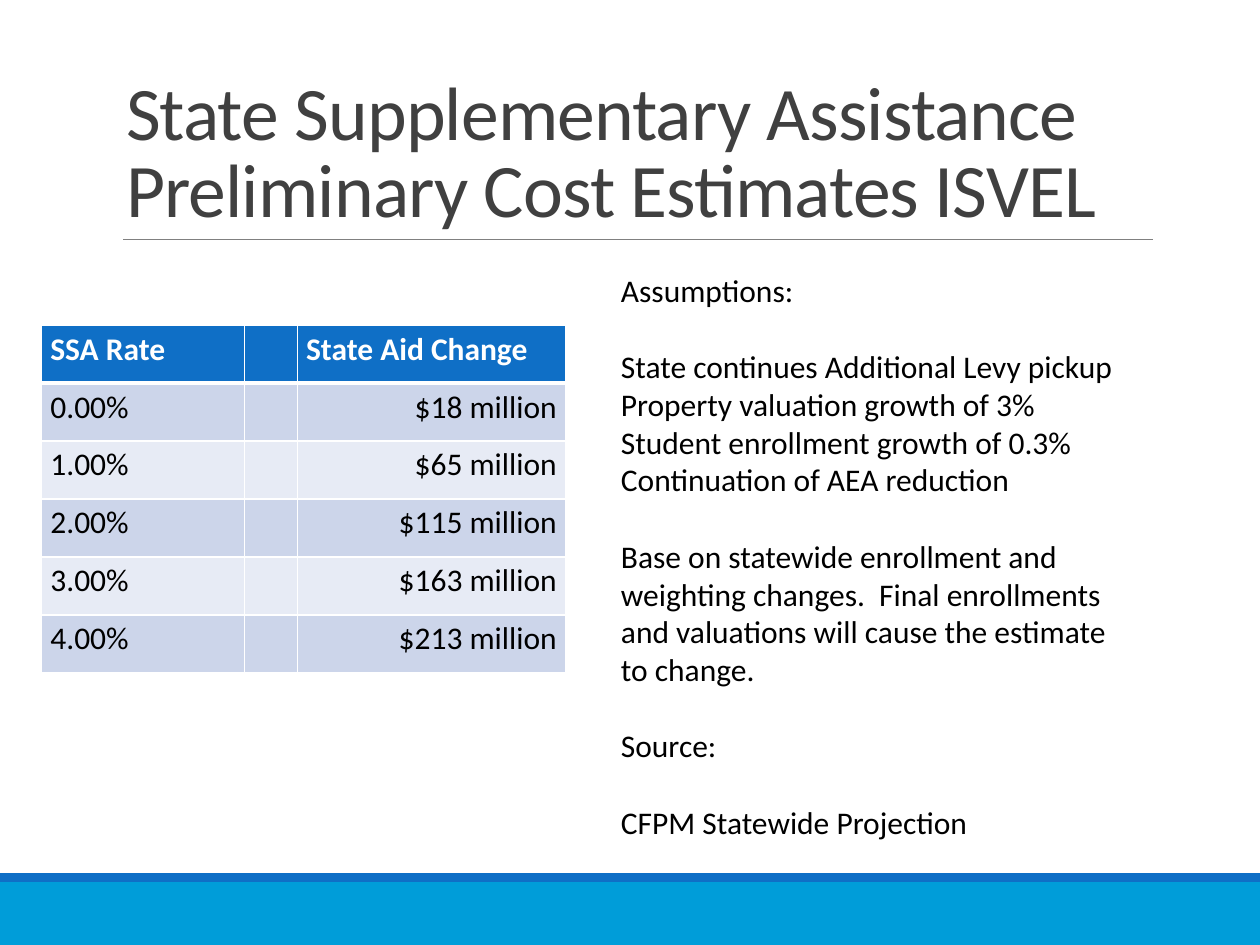
import pptx
import pptx.util
import pptx.dml.color
import pptx.enum.shapes
import pptx.enum.text
import pptx.oxml
import pptx.oxml.ns
from pptx.util import Inches

FONT = "Calibri"
TITLE = "State Supplementary Assistance Preliminary Cost Estimates ISVEL"
BANDS = [(7, 0.5, "009DD9"), (6.93, 0.07, "0F6FC6")]
TABLE_ROWS = [
    ("SSA Rate", "", "State Aid Change"),
    ("0.00%", "", "$18 million"),
    ("1.00%", "", "$65 million"),
    ("2.00%", "", "$115 million"),
    ("3.00%", "", "$163 million"),
    ("4.00%", "", "$213 million"),
]
COLUMN_WIDTHS = [1.61, 0.42, 2.13]
ROW_HEIGHT = 0.46
HEADER_FILL = "0F6FC6"
ROW_FILLS = ["CCD5EA", "E7EBF5"]
NOTE_GROUPS = [
    ["Assumptions:"],
    [
        "State continues Additional Levy pickup",
        "Property valuation growth of 3%",
        "Student enrollment growth of 0.3%",
        "Continuation of AEA reduction",
    ],
    ["Base on statewide enrollment and weighting changes.  Final enrollments "
     "and valuations will cause the estimate to change."],
    ["Source:"],
    ["CFPM Statewide Projection"],
]
GROUP_GAP = 22


def color(value):
    return pptx.dml.color.RGBColor.from_string(value)


def add_run(paragraph, text, size, text_color, bold=False):
    run = paragraph.add_run()
    run.text = text
    run.font.name = FONT
    run.font.size = pptx.util.Pt(size)
    run.font.bold = bold
    run.font.color.rgb = color(text_color)
    return run


def clear_shadow(connector):
    properties = connector._element.spPr
    properties.append(pptx.oxml.parse_xml(
        f"<a:effectLst {pptx.oxml.ns.nsdecls('a')}/>"))


def set_borders(cell, bottom_width):
    properties = cell._tc.get_or_add_tcPr()
    widths = {"lnL": 1, "lnR": 1, "lnT": 1, "lnB": bottom_width}
    for position, (side, width) in enumerate(widths.items()):
        properties.insert(position, pptx.oxml.parse_xml(
            f"<a:{side} {pptx.oxml.ns.nsdecls('a')} w=\"{pptx.util.Pt(width)}\">"
            f"<a:solidFill><a:srgbClr val=\"FFFFFF\"/></a:solidFill></a:{side}>"))


def add_bands(slide):
    for top, height, fill in BANDS:
        band = slide.shapes.add_shape(
            pptx.enum.shapes.MSO_SHAPE.RECTANGLE,
            0, Inches(top), Inches(10), Inches(height))
        band.shadow.inherit = False
        band.fill.solid()
        band.fill.fore_color.rgb = color(fill)
        band.line.fill.background()


def add_title(slide):
    title = slide.shapes.title
    title.left, title.top = Inches(0.9), Inches(0.31)
    title.width, title.height = Inches(8.25), Inches(1.59)
    frame = title.text_frame
    frame.word_wrap = True
    frame.auto_size = pptx.enum.text.MSO_AUTO_SIZE.NONE
    frame.vertical_anchor = pptx.enum.text.MSO_ANCHOR.BOTTOM
    paragraph = frame.paragraphs[0]
    paragraph.alignment = pptx.enum.text.PP_ALIGN.LEFT
    paragraph.line_spacing = 0.85
    run = add_run(paragraph, TITLE, 43.2, "404040")
    run._r.get_or_add_rPr().set("spc", "-50")

    rule = slide.shapes.add_connector(
        pptx.enum.shapes.MSO_CONNECTOR.STRAIGHT,
        Inches(0.98), Inches(1.9), Inches(9.15), Inches(1.9))
    rule.line.color.rgb = color("808080")
    rule.line.width = pptx.util.Pt(0.5)
    clear_shadow(rule)


def add_rate_table(slide):
    table = slide.shapes.add_table(
        len(TABLE_ROWS), len(COLUMN_WIDTHS), Inches(0.33), Inches(2.58),
        Inches(sum(COLUMN_WIDTHS)), Inches(ROW_HEIGHT * len(TABLE_ROWS))).table
    for column, width in zip(table.columns, COLUMN_WIDTHS):
        column.width = Inches(width)
    for row_index, values in enumerate(TABLE_ROWS):
        table.rows[row_index].height = Inches(ROW_HEIGHT)
        header = row_index == 0
        for column_index, text in enumerate(values):
            cell = table.cell(row_index, column_index)
            cell.margin_left = cell.margin_right = Inches(0.07)
            cell.margin_top = cell.margin_bottom = Inches(0.04)
            cell.fill.solid()
            cell.fill.fore_color.rgb = color(
                HEADER_FILL if header else ROW_FILLS[(row_index - 1) % 2])
            set_borders(cell, 3 if header else 1)
            if text:
                paragraph = cell.text_frame.paragraphs[0]
                if column_index == 2 and not header:
                    paragraph.alignment = pptx.enum.text.PP_ALIGN.RIGHT
                add_run(paragraph, text, 18,
                        "FFFFFF" if header else "000000", header)


def add_notes_box(slide):
    box = slide.shapes.add_textbox(
        Inches(4.83), Inches(2.1), Inches(4.13), Inches(4.64))
    frame = box.text_frame
    frame.word_wrap = True
    frame.auto_size = pptx.enum.text.MSO_AUTO_SIZE.SHAPE_TO_FIT_TEXT
    for group_index, lines in enumerate(NOTE_GROUPS):
        for line_index, text in enumerate(lines):
            if group_index == 0 and line_index == 0:
                paragraph = frame.paragraphs[0]
            else:
                paragraph = frame.add_paragraph()
                if line_index == 0:
                    paragraph.space_before = pptx.util.Pt(GROUP_GAP)
            add_run(paragraph, text, 18, "000000")


def main():
    presentation = pptx.Presentation()
    presentation.slide_width = Inches(10)
    presentation.slide_height = Inches(7.5)
    slide = presentation.slides.add_slide(presentation.slide_layouts[5])
    add_bands(slide)
    add_title(slide)
    add_rate_table(slide)
    add_notes_box(slide)
    presentation.save("out.pptx")


if __name__ == "__main__":
    main()
